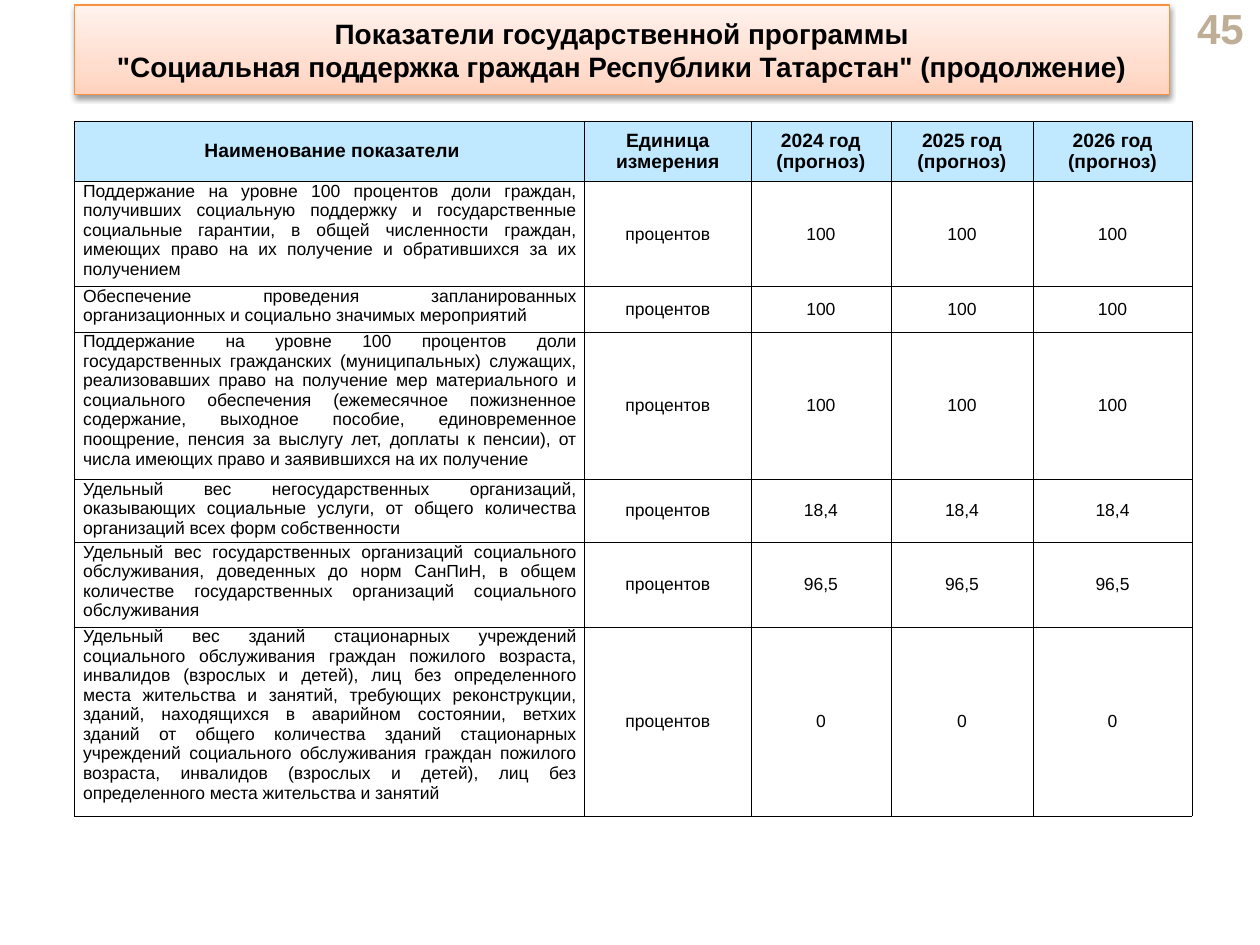
from pptx import Presentation
from pptx import util as u
from pptx.dml.color import RGBColor
from pptx.enum import text
from pptx.oxml import parse_xml
from pptx.oxml.ns import nsdecls

INDICATORS = [
    ("Поддержание на уровне 100 процентов доли граждан, получивших социальную поддержку и "
     "государственные социальные гарантии, в общей численности граждан, имеющих право на их "
     "получение и обратившихся за их получением", "100", 0.83),
    ("Обеспечение проведения запланированных организационных и социально значимых мероприятий",
     "100", 0.36),
    ("Поддержание на уровне 100 процентов доли государственных гражданских (муниципальных) "
     "служащих, реализовавших право на получение мер материального и социального обеспечения "
     "(ежемесячное пожизненное содержание, выходное пособие, единовременное поощрение, пенсия "
     "за выслугу лет, доплаты к пенсии), от числа имеющих право и заявившихся на их получение",
     "100", 1.17),
    ("Удельный вес негосударственных организаций, оказывающих социальные услуги, от общего "
     "количества организаций всех форм собственности", "18,4", 0.5),
    ("Удельный вес государственных организаций социального обслуживания, доведенных до норм "
     "СанПиН, в общем количестве государственных организаций социального обслуживания",
     "96,5", 0.67),
    ("Удельный вес зданий стационарных учреждений социального обслуживания граждан пожилого "
     "возраста, инвалидов (взрослых и детей), лиц без определенного места жительства и занятий, "
     "требующих реконструкции, зданий, находящихся в аварийном состоянии, ветхих зданий от "
     "общего количества зданий стационарных учреждений социального обслуживания граждан "
     "пожилого возраста, инвалидов (взрослых и детей), лиц без определенного места жительства "
     "и занятий", "0", 1.5),
]
YEARS = (2024, 2025, 2026)
COLUMN_WIDTHS = (4.05, 1.32, 1.11, 1.13, 1.26)
HEADER_HEIGHT = 0.48


def color(value):
    return RGBColor.from_string(value)


class SlideBuilder:
    font = "Arial"
    ink = "000000"
    header_fill = "C0E9FF"
    body_fill = "FFFFFF"
    banner_line = "F69240"
    banner_stops = ((0, "FFD2BD"), (35, "FFDED0"), (100, "FFF2ED"))

    def __init__(self, slide):
        self.slide = slide

    def set_text(self, frame, content, size, align, bold=False, ink=None):
        frame.text = content
        frame.word_wrap = True
        for paragraph in frame.paragraphs:
            paragraph.alignment = align
            for run in paragraph.runs:
                run.font.name = self.font
                run.font.size = u.Pt(size)
                run.font.bold = bold
                run.font.color.rgb = color(ink or self.ink)

    def banner(self, content, left, top, width, height):
        title = self.slide.shapes.title
        title.left, title.top = u.Inches(left), u.Inches(top)
        title.width, title.height = u.Inches(width), u.Inches(height)
        stops = "".join(
            f'<a:gs pos="{position * 1000}"><a:srgbClr val="{shade}"/></a:gs>'
            for position, shade in self.banner_stops)
        ns = nsdecls("a")
        for xml in (
            f'<a:prstGeom {ns} prst="roundRect"><a:avLst/></a:prstGeom>',
            f'<a:gradFill {ns} rotWithShape="1"><a:gsLst>{stops}</a:gsLst>'
            '<a:lin ang="16200000" scaled="1"/></a:gradFill>',
            f'<a:effectLst {ns}><a:outerShdw blurRad="{u.Pt(3.1)}" dist="{u.Pt(1.6)}" '
            'dir="5400000" rotWithShape="0"><a:srgbClr val="000000">'
            '<a:alpha val="38000"/></a:srgbClr></a:outerShdw></a:effectLst>',
        ):
            title.element.spPr.append(parse_xml(xml))
        title.line.color.rgb = color(self.banner_line)
        title.line.width = u.Pt(0.75)
        frame = title.text_frame
        self.set_text(frame, content, 16, text.PP_ALIGN.CENTER, bold=True)
        frame.auto_size = text.MSO_AUTO_SIZE.NONE
        frame.vertical_anchor = text.MSO_ANCHOR.MIDDLE

    def page_number(self, number, left, top, width, height):
        box = self.slide.shapes.add_textbox(*map(u.Inches, (left, top, width, height)))
        self.set_text(box.text_frame, number, 24, text.PP_ALIGN.RIGHT, bold=True, ink="BFAE96")
        box.text_frame.vertical_anchor = text.MSO_ANCHOR.MIDDLE

    def cell(self, cell, content, size, align, fill, anchor, bold):
        self.set_text(cell.text_frame, content, size, align, bold)
        cell.vertical_anchor = anchor
        cell.margin_left = cell.margin_right = u.Inches(0.07)
        cell.margin_top = cell.margin_bottom = 0
        properties = cell._tc.get_or_add_tcPr()
        for side in ("lnL", "lnR", "lnT", "lnB"):
            properties.append(parse_xml(
                f'<a:{side} {nsdecls("a")} w="{u.Pt(0.25)}"><a:solidFill>'
                f'<a:srgbClr val="{self.ink}"/></a:solidFill></a:{side}>'))
        if fill:
            cell.fill.solid()
            cell.fill.fore_color.rgb = color(fill)
        else:
            cell.fill.background()

    def table(self, rows, widths, heights, left, top):
        table = self.slide.shapes.add_table(
            len(rows), len(widths), u.Inches(left), u.Inches(top),
            u.Inches(sum(widths)), u.Inches(sum(heights))).table
        table.horz_banding = False
        for column, width in zip(table.columns, widths):
            column.width = u.Inches(width)
        for r, (row, height) in enumerate(zip(rows, heights)):
            table.rows[r].height = u.Inches(height)
            for c, content in enumerate(row):
                header = r == 0
                description = c == 0 and not header
                self.cell(
                    table.cell(r, c), content, 11 if header else 10,
                    text.PP_ALIGN.JUSTIFY if description else text.PP_ALIGN.CENTER,
                    self.header_fill if header else None if description else self.body_fill,
                    text.MSO_ANCHOR.TOP if description else text.MSO_ANCHOR.MIDDLE,
                    bold=header)


def main():
    deck = Presentation()
    deck.slide_width, deck.slide_height = u.Inches(10), u.Inches(7.5)
    builder = SlideBuilder(deck.slides.add_slide(deck.slide_layouts.get_by_name("Title Only")))
    builder.page_number("45", 9.11, 0.05, 0.86, 0.34)
    header = [" Наименование показатели", "Единица измерения"]
    header += [f"{year} год (прогноз)" for year in YEARS]
    rows = [header] + [
        [name, "процентов"] + [value] * len(YEARS) for name, value, _ in INDICATORS]
    heights = [HEADER_HEIGHT] + [height for _, _, height in INDICATORS]
    builder.table(rows, COLUMN_WIDTHS, heights, 0.59, 0.96)
    builder.banner(
        "Показатели государственной программы\n"
        '"Социальная поддержка граждан Республики Татарстан" (продолжение)',
        0.59, 0.04, 8.69, 0.71)
    deck.save("out.pptx")


if __name__ == "__main__":
    main()
